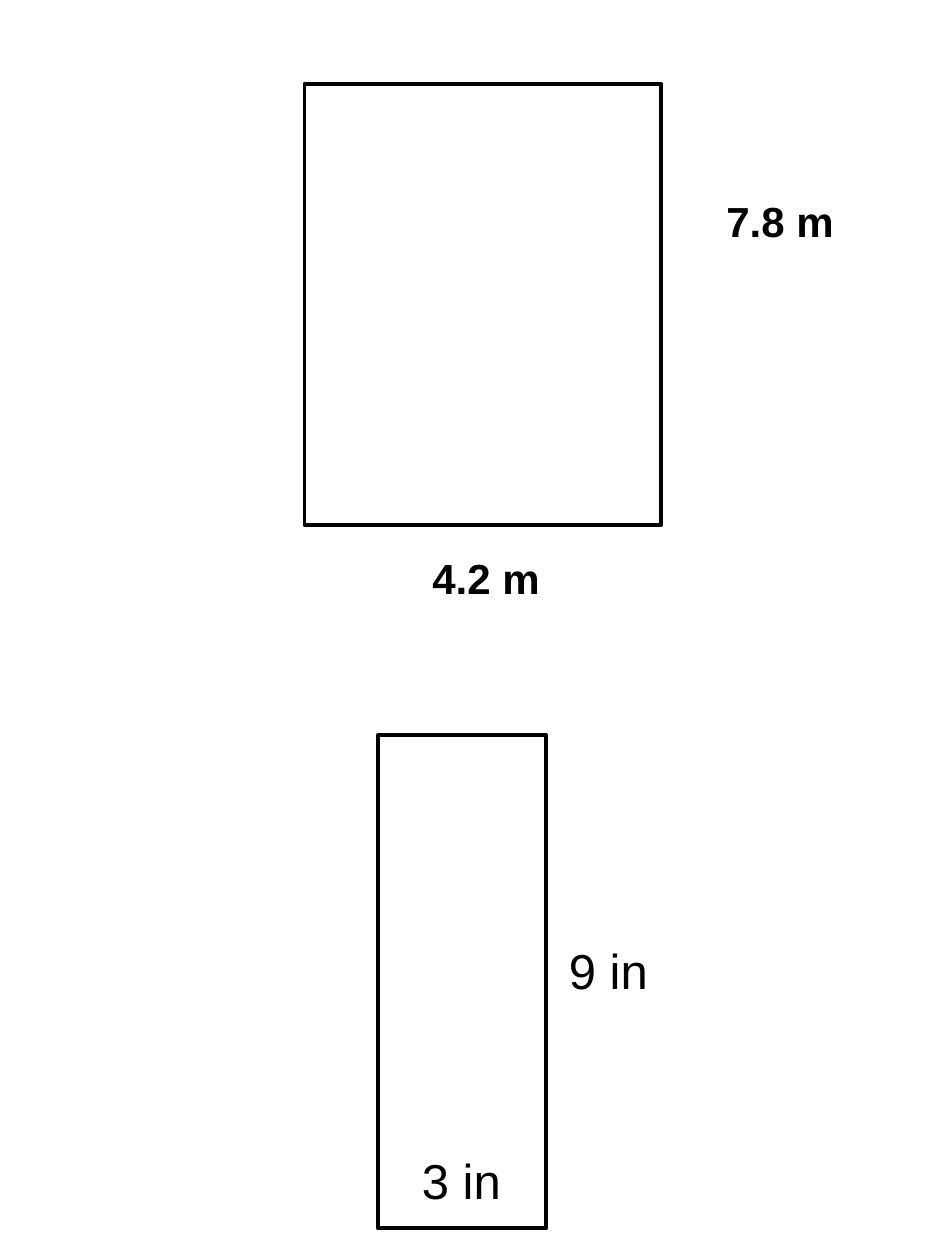
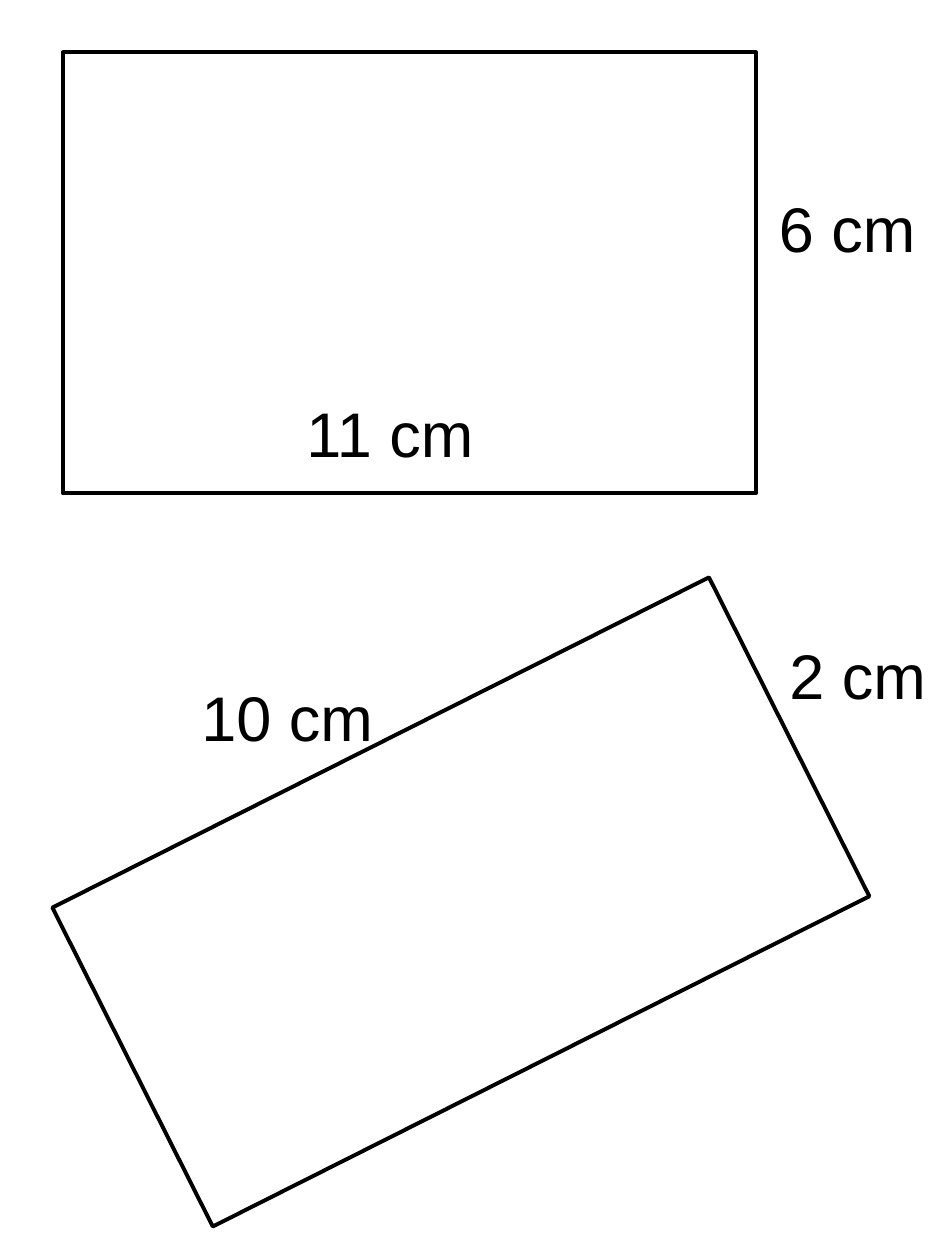
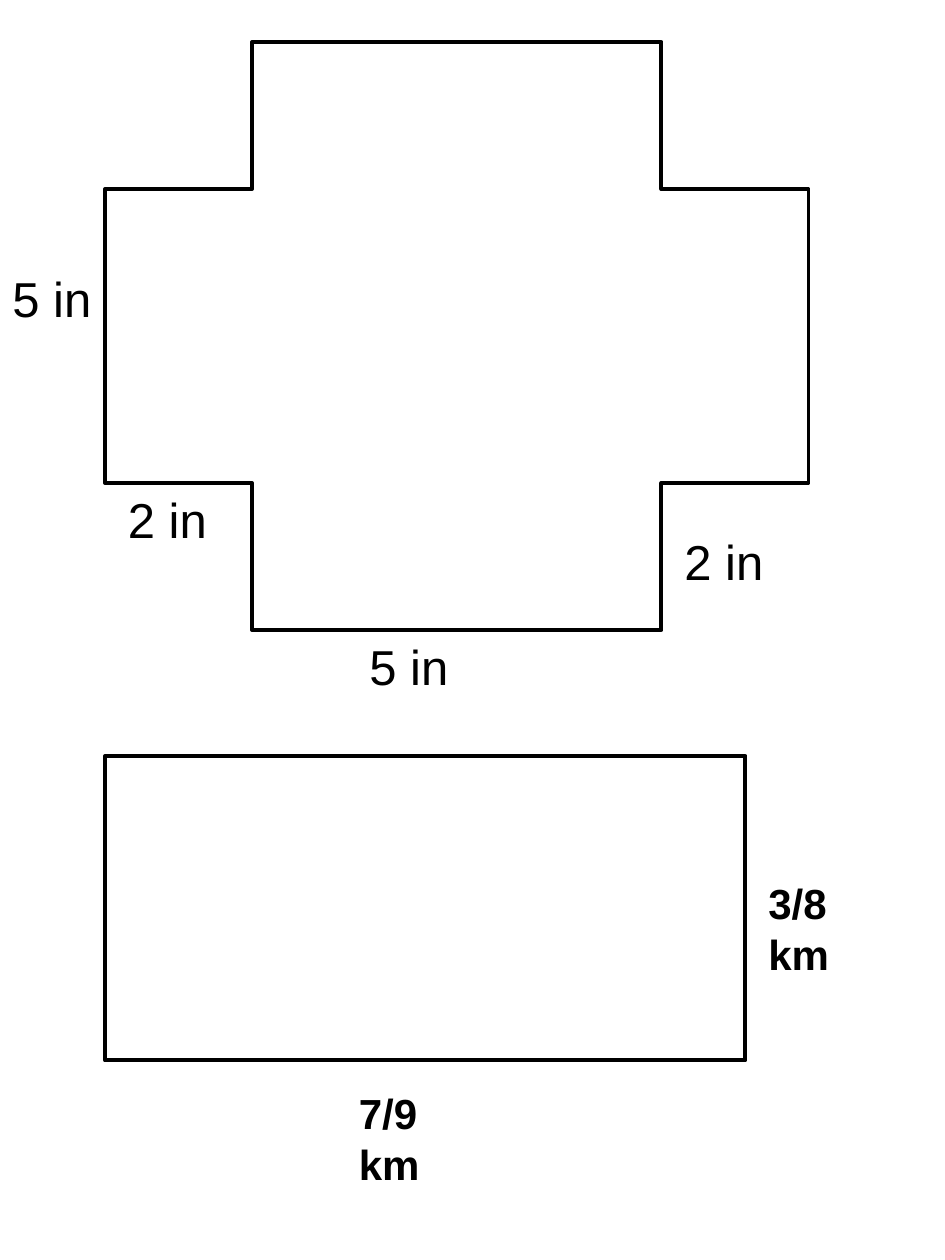
"""Builds three slides of labelled shapes for measuring perimeter and area."""
from pptx import Presentation
from pptx.dml.color import RGBColor
from pptx.enum.shapes import MSO_SHAPE
from pptx.enum.text import MSO_AUTO_SIZE
from pptx.util import Inches, Pt

RECTANGLE = MSO_SHAPE.RECTANGLE
CROSS = MSO_SHAPE.CROSS
GROW = MSO_AUTO_SIZE.SHAPE_TO_FIT_TEXT

COLORS = {"ink": "000000", "paper": "FFFFFF"}
FONT = "Arial"
WIDTH, HEIGHT = Inches(7.5), Inches(10)
COLUMNS, ROWS = 90, 120
OUTLINE = Pt(2.25)
LABEL_COLUMNS = 20
LINE_SPACING = 1.2
INSET = Inches(0.05)


def color(name):
    """Return a named colour of the palette."""
    return RGBColor.from_string(COLORS[name])


def across(columns):
    """Turn grid columns into a length."""
    return round(WIDTH * columns / COLUMNS)


def down(rows):
    """Turn grid rows into a length."""
    return round(HEIGHT * rows / ROWS)


def add_slide(presentation):
    """Add a blank slide with a paper background."""
    slide = presentation.slides.add_slide(presentation.slide_layouts[6])
    slide.background.fill.solid()
    slide.background.fill.fore_color.rgb = color("paper")
    return slide


def add_figure(slide, column, row, columns, rows, kind=RECTANGLE, rotation=0):
    """Draw an unfilled, outlined figure on the grid."""
    shape = slide.shapes.add_shape(
        kind, across(column), down(row), across(columns), down(rows))
    shape.shadow.inherit = False
    shape.fill.background()
    shape.line.color.rgb = color("ink")
    shape.line.width = OUTLINE
    shape.rotation = rotation


def add_label(slide, text, column, row, columns=LABEL_COLUMNS, size=28,
              bold=False, lines=1):
    """Write a measurement whose box is as tall as its lines of text."""
    height = round(lines * Pt(size) * LINE_SPACING) + 2 * INSET
    box = slide.shapes.add_textbox(
        across(column), down(row), across(columns), height)
    frame = box.text_frame
    frame.word_wrap = True
    frame.auto_size = GROW
    run = frame.paragraphs[0].add_run()
    run.text = text
    run.font.name = FONT
    run.font.size = Pt(size)
    run.font.bold = bold
    run.font.color.rgb = color("ink")


def build_upright_rectangles(presentation):
    """Build the slide of two upright rectangles."""
    slide = add_slide(presentation)
    add_figure(slide, 29, 8, 34, 42)
    add_label(slide, "7.8 m", 68, 18, columns=14, size=24, bold=True)
    add_label(slide, "4.2 m", 40, 52, columns=13, size=24, bold=True)
    add_figure(slide, 36, 70, 16, 47)
    add_label(slide, "3 in", 39, 109)
    add_label(slide, "9 in", 53, 89)


def build_wide_rectangles(presentation):
    """Build the slide of a level and a tilted rectangle."""
    slide = add_slide(presentation)
    add_figure(slide, 6, 5, 66, 42)
    add_figure(slide, 8.9, 68.9, 70, 34, rotation=333.3)
    for text, column, row in (("10 cm", 18, 64), ("11 cm", 28, 37),
                              ("2 cm", 74, 60), ("6 cm", 73, 17.5)):
        add_label(slide, text, column, row, size=36)


def build_cross_and_rectangle(presentation):
    """Build the slide of a cross and a rectangle with fractional sides."""
    slide = add_slide(presentation)
    add_figure(slide, 10, 4, 67, 56, kind=CROSS)
    for text, column, row in (("5 in", 0, 25), ("2 in", 11, 46),
                              ("5 in", 34, 60), ("2 in", 64, 50)):
        add_label(slide, text, column, row)
    add_figure(slide, 10, 72, 61, 29)
    for text, column, row in (("3/8 km", 72, 83), ("7/9 km", 33, 103)):
        add_label(slide, text, column, row, columns=14, size=24, bold=True,
                  lines=2)


def main():
    """Build and save the presentation."""
    presentation = Presentation()
    presentation.slide_width = WIDTH
    presentation.slide_height = HEIGHT
    build_upright_rectangles(presentation)
    build_wide_rectangles(presentation)
    build_cross_and_rectangle(presentation)
    presentation.save("out.pptx")


if __name__ == "__main__":
    main()
